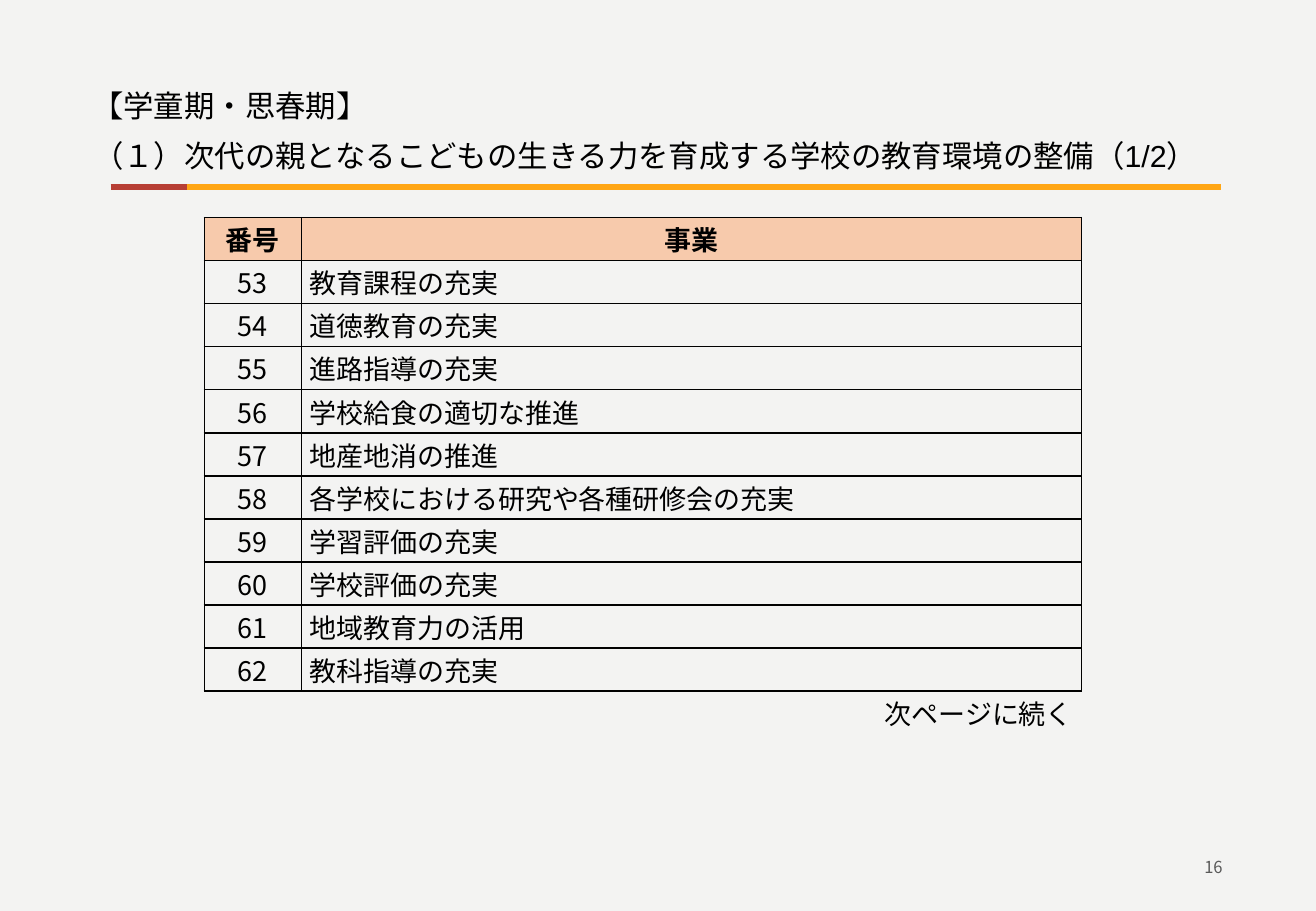
from lxml.etree import SubElement
from pptx import Presentation
from pptx.dml.color import RGBColor
from pptx.enum.lang import MSO_LANGUAGE_ID as Lang
from pptx.enum.shapes import MSO_CONNECTOR as Connector
from pptx.enum.text import MSO_ANCHOR as Anchor, PP_ALIGN as Align
from pptx.oxml.ns import qn
from pptx.util import Cm, Pt

BACKGROUND = RGBColor(0xF3, 0xF3, 0xF2)
BLACK = RGBColor(0x00, 0x00, 0x00)
GRAY = RGBColor(0x59, 0x59, 0x59)
PEACH = RGBColor(0xF7, 0xCA, 0xAC)
ORANGE = RGBColor(0xFF, 0xA6, 0x15)
RED = RGBColor(0xB7, 0x3E, 0x35)

SANS = "Noto Sans CJK JP"
FIRST_NUMBER = 53
PROJECTS = [
    "教育課程の充実",
    "道徳教育の充実",
    "進路指導の充実",
    "学校給食の適切な推進",
    "地産地消の推進",
    "各学校における研究や各種研修会の充実",
    "学習評価の充実",
    "学校評価の充実",
    "地域教育力の活用",
    "教科指導の充実",
]
HEADING = [
    [("【", "Cambria"), ("学童期・思春期", "Arial"), ("】", "Cambria")],
    [("（１）", SANS),
     ("次代の親となるこどもの生きる力を育成する学校の教育環境の整備（1/2）", "Arial")],
]
ROW_HEIGHT = 0.9
COLUMN_WIDTHS = (2.03, 16.31)
RULE_Y = 3.91


def write(paragraph, text, font=SANS, size=16, color=BLACK, bold=False, align=Align.LEFT):
    paragraph.alignment = align
    run = paragraph.add_run()
    run.text = text
    run.font.name = font
    run.font.size = Pt(size)
    run.font.bold = bold
    run.font.color.rgb = color
    run.font.language_id = Lang.JAPANESE
    SubElement(run.font._element, qn("a:ea"), typeface=font)


def add_text_frame(slide, left, top, width, height):
    frame = slide.shapes.add_textbox(Cm(left), Cm(top), Cm(width), Cm(height)).text_frame
    frame.word_wrap = True
    frame.vertical_anchor = Anchor.MIDDLE
    return frame


def add_heading(slide):
    frame = add_text_frame(slide, 1.32, 1.68, 25.22, 2.24)
    frame.add_paragraph()
    for paragraph, pieces in zip(frame.paragraphs, HEADING):
        paragraph.line_spacing = 0.8
        paragraph._p.get_or_add_pPr().set("indent", str(Cm(0.38)))
        for text, font in pieces:
            write(paragraph, text, font=font, size=18)
    frame.paragraphs[0].space_after = Pt(12)


def set_borders(cell, sides):
    properties = cell._tc.get_or_add_tcPr()
    for side in "LRTB":
        border = SubElement(properties, qn(f"a:ln{side}"), w=str(Pt(1)))
        if side in sides:
            fill = SubElement(border, qn("a:solidFill"))
            SubElement(fill, qn("a:srgbClr"), val=str(BLACK))
        else:
            SubElement(border, qn("a:noFill"))


def fill_cell(cell, text, fill=None, sides="LRTB", **text_format):
    cell.margin_left = cell.margin_right = Cm(0.18)
    cell.margin_top = cell.margin_bottom = 0
    cell.vertical_anchor = Anchor.MIDDLE
    set_borders(cell, sides)
    if fill is None:
        cell.fill.background()
    else:
        cell.fill.solid()
        cell.fill.fore_color.rgb = fill
    write(cell.text_frame.paragraphs[0], text, **text_format)


def add_project_table(slide):
    row_count = len(PROJECTS) + 2
    table = slide.shapes.add_table(
        row_count, 2, Cm(4.27), Cm(4.55),
        Cm(sum(COLUMN_WIDTHS)), Cm(ROW_HEIGHT * row_count)).table
    table.first_row = table.horz_banding = False
    for column, width in zip(table.columns, COLUMN_WIDTHS):
        column.width = Cm(width)
    for row in table.rows:
        row.height = Cm(ROW_HEIGHT)

    for column, title in enumerate(("番号", "事業")):
        fill_cell(table.cell(0, column), title, fill=PEACH, bold=True, align=Align.CENTER)
    for row, project in enumerate(PROJECTS, start=1):
        fill_cell(table.cell(row, 0), str(FIRST_NUMBER + row - 1), align=Align.CENTER)
        fill_cell(table.cell(row, 1), project)
    for column, note in enumerate(("", "次ページに続く")):
        fill_cell(table.cell(row_count - 1, column), note, sides="T", align=Align.RIGHT)


def add_rule(group, start, end, color):
    rule = group.shapes.add_connector(
        Connector.STRAIGHT, Cm(start), Cm(RULE_Y), Cm(end), Cm(RULE_Y))
    rule.line.color.rgb = color
    rule.line.width = Pt(3)
    SubElement(rule._element.spPr, qn("a:effectLst"))


def main():
    presentation = Presentation()
    presentation.slide_width = Cm(27.51)
    presentation.slide_height = Cm(19.05)
    slide = presentation.slides.add_slide(presentation.slide_layouts[6])
    slide.background.fill.solid()
    slide.background.fill.fore_color.rgb = BACKGROUND

    page_number = add_text_frame(slide, 19.43, 17.73, 6.38, 0.79)
    write(page_number.paragraphs[0], "16", size=9.8, color=GRAY, align=Align.RIGHT)
    add_heading(slide)
    add_project_table(slide)
    underline = slide.shapes.add_group_shape()
    add_rule(underline, 2.36, 25.53, ORANGE)
    add_rule(underline, 2.31, 3.91, RED)
    presentation.save("out.pptx")


if __name__ == "__main__":
    main()
